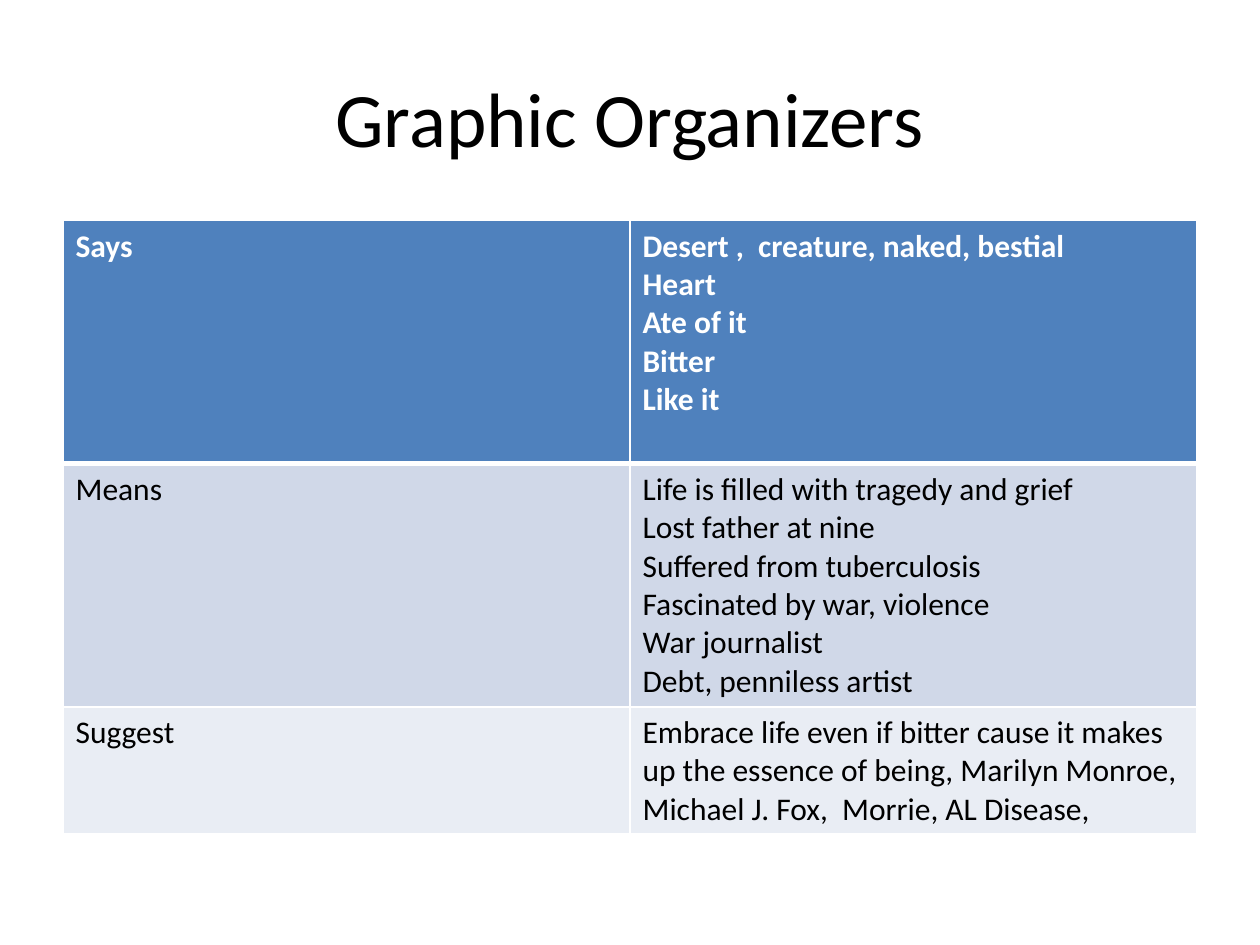
"""Build the Graphic Organizers slide with its says, means and suggest table."""
from lxml.etree import SubElement
from pptx import Presentation
from pptx.dml.color import RGBColor
from pptx.enum.text import MSO_ANCHOR, PP_ALIGN
from pptx.oxml.ns import qn
from pptx.util import Cm, Pt


def style_font(font, size, color, bold=False):
    font.name = "Calibri"
    font.size = Pt(size)
    font.bold = bold
    font.color.rgb = RGBColor.from_string(color)


def add_borders(cell, widths, color):
    properties = cell._tc.get_or_add_tcPr()
    for position, (side, width) in enumerate(widths.items()):
        line = SubElement(properties, qn(f"a:ln{side}"), w=str(Pt(width)))
        fill = SubElement(line, qn("a:solidFill"))
        SubElement(fill, qn("a:srgbClr"), val=color)
        properties.insert(position, line)


ROWS = [
    ("Says",
     ["Desert ,  creature, naked, bestial", "Heart", "Ate of it", "Bitter", "Like it"],
     4.9, "4F81BD", "FFFFFF"),
    ("Means",
     ["Life is filled with tragedy and grief", "Lost father at nine",
      "Suffered from tuberculosis", "Fascinated by war, violence",
      "War journalist", "Debt, penniless artist"],
     4.9, "D0D8E8", "000000"),
    ("Suggest",
     ["Embrace life even if bitter cause it makes up the essence of being, "
      "Marilyn Monroe, Michael J. Fox,  Morrie, AL Disease,"],
     2.55, "E9EDF4", "000000"),
]

presentation = Presentation()
presentation.slide_width = Cm(25.4)
presentation.slide_height = Cm(19.05)
slide = presentation.slides.add_slide(presentation.slide_layouts[6])

title = slide.shapes.add_textbox(Cm(1.27), Cm(0.76), Cm(22.86), Cm(3.18))
title.text_frame.word_wrap = True
title.text_frame.vertical_anchor = MSO_ANCHOR.MIDDLE
title.text_frame.text = "Graphic Organizers"
paragraph = title.text_frame.paragraphs[0]
paragraph.alignment = PP_ALIGN.CENTER
style_font(paragraph.font, 44, "000000")

table_height = Cm(sum(row[2] for row in ROWS))
table = slide.shapes.add_table(
    len(ROWS), 2, Cm(1.27), Cm(4.45), Cm(22.86), table_height).table

for row_index, (label, lines, height, fill_color, text_color) in enumerate(ROWS):
    table.rows[row_index].height = Cm(height)
    is_header = row_index == 0
    widths = {"L": 1, "R": 1, "T": 3 if row_index == 1 else 1, "B": 3 if is_header else 1}
    for column_index, content in enumerate([[label], lines]):
        cell = table.cell(row_index, column_index)
        cell.text = "\n".join(content)
        cell.fill.solid()
        cell.fill.fore_color.rgb = RGBColor.from_string(fill_color)
        add_borders(cell, widths, "FFFFFF")
        for paragraph in cell.text_frame.paragraphs:
            style_font(paragraph.font, 18, text_color, is_header)

presentation.save("out.pptx")
